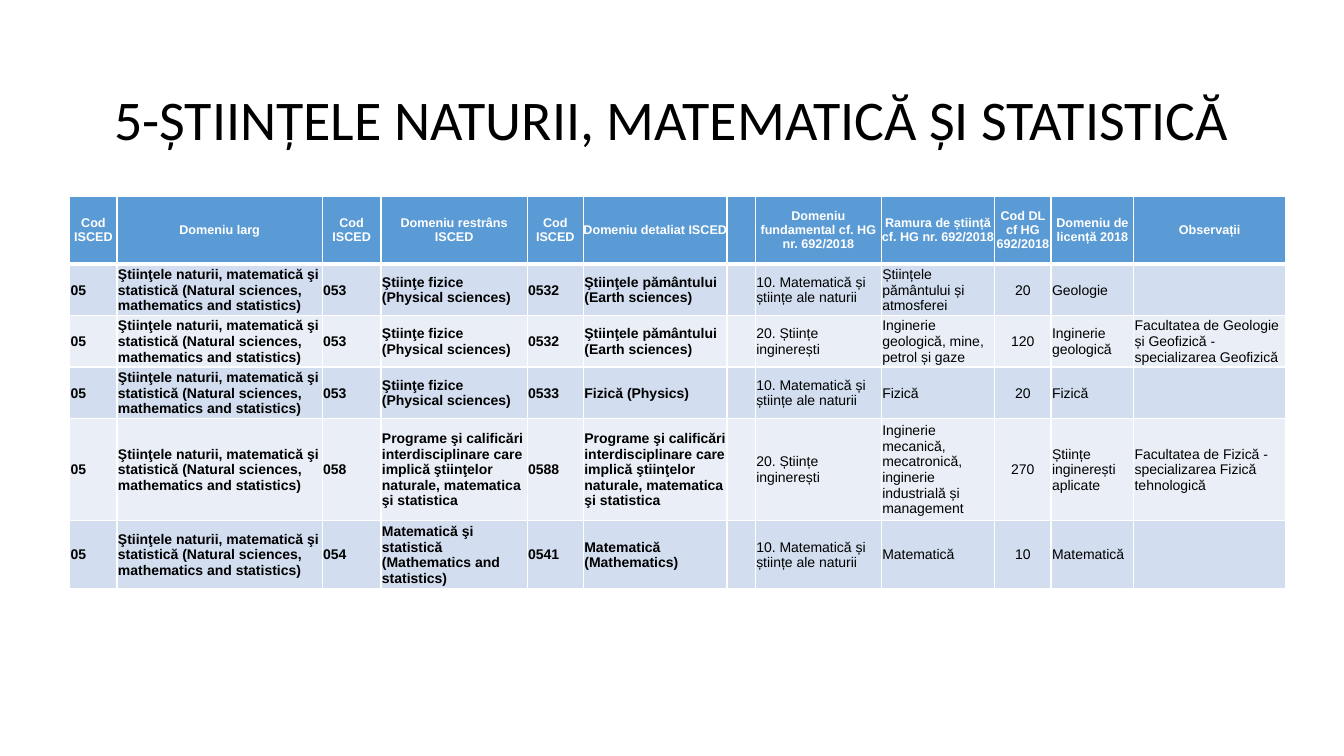
import pptx
import pptx.util
import pptx.dml.color
import pptx.enum.text
import pptx.oxml

ALIGN = pptx.enum.text.PP_ALIGN
MIDDLE = pptx.enum.text.MSO_ANCHOR.MIDDLE
NAMESPACE = "http://schemas.openxmlformats.org/drawingml/2006/main"

COLUMN_WIDTHS = [33.8, 146.6, 42, 104.4, 40.2, 102.6, 20.2, 90, 80.9, 40.4, 59, 108.6]
ROW_HEIGHTS = [48.2, 34.2, 34.2, 34.2, 67.8, 45]
CODE_COLUMNS = (0, 2, 4)
LICENCE_CODE_COLUMN = 9
BOLD_COLUMNS = 6

HEADINGS = [
    "Cod ISCED", "Domeniu larg", "Cod ISCED", "Domeniu restrâns ISCED", "Cod ISCED",
    "Domeniu detaliat ISCED", "", "Domeniu fundamental cf. HG nr. 692/2018",
    "Ramura de știință cf. HG nr. 692/2018", "Cod DL cf HG 692/2018",
    "Domeniu de licență 2018", "Observații",
]
BROAD_FIELD = ["05", "Ştiinţele naturii, matematică şi statistică "
               "(Natural sciences, mathematics and statistics)"]
PHYSICAL = ["053", "Ştiinţe fizice (Physical sciences)"]
EARTH = ["0532", "Ştiinţele pământului (Earth sciences)"]
INTERDISCIPLINARY = ("Programe şi calificări interdisciplinare care implică "
                     "ştiinţelor naturale, matematica şi statistica")
NATURE = "10. Matematică și științe ale naturii"
ENGINEERING = "20. Științe inginerești"
FIELDS = [
    PHYSICAL + EARTH + ["", NATURE, "Științele pământului și atmosferei", "20", "Geologie", ""],
    PHYSICAL + EARTH + ["", ENGINEERING, "Inginerie geologică, mine, petrol și gaze", "120",
                        "Inginerie geologică",
                        "Facultatea de Geologie și Geofizică - specializarea Geofizică"],
    PHYSICAL + ["0533", "Fizică (Physics)", "", NATURE, "Fizică", "20", "Fizică", ""],
    ["058", INTERDISCIPLINARY, "0588", INTERDISCIPLINARY, "", ENGINEERING,
     "Inginerie mecanică, mecatronică, inginerie industrială și management", "270",
     "Științe inginerești aplicate",
     "Facultatea de Fizică - specializarea Fizică tehnologică"],
    ["054", "Matematică şi statistică (Mathematics and statistics)", "0541",
     "Matematică (Mathematics)", "", NATURE, "Matematică", "10", "Matematică", ""],
]


def color(value):
    """Return the colour for a hex string."""
    return pptx.dml.color.RGBColor.from_string(value)


def set_values(target, values):
    """Set each attribute named in a dict."""
    for name, value in values.items():
        setattr(target, name, value)


def write(para, text, alignment, ink, font):
    """Write one formatted span into a paragraph."""
    para.alignment = alignment
    span = para.add_run()
    span.text = text
    set_values(span.font, font)
    span.font.color.rgb = color(ink)


def add_title(page, left, top, width, height):
    """Place the slide title in the given box."""
    box = page.shapes.add_textbox(*map(pptx.util.Pt, (left, top, width, height)))
    set_values(box.text_frame, {
        "word_wrap": True, "vertical_anchor": MIDDLE,
        "margin_top": 0, "margin_bottom": 0, "margin_right": pptx.util.Pt(15.8),
    })
    para = box.text_frame.paragraphs[0]
    para.line_spacing = 0.9
    write(para, "5-ȘTIINȚELE NATURII, MATEMATICĂ ȘI STATISTICĂ", ALIGN.CENTER, "000000",
          {"name": "Calibri", "size": pptx.util.Pt(40)})


def add_borders(cell, top, bottom):
    """Give a cell white borders, with top and bottom widths in points."""
    properties = cell._tc.get_or_add_tcPr()
    for side, width in {"L": 1, "R": 1, "T": top, "B": bottom}.items():
        properties.append(pptx.oxml.parse_xml(
            f'<a:ln{side} xmlns:a="{NAMESPACE}" w="{pptx.util.Pt(width)}">'
            f'<a:solidFill><a:srgbClr val="FFFFFF"/></a:solidFill></a:ln{side}>'))


def fill_cell(cell, row, column, text):
    """Format one cell by its place in the table."""
    header = row == 0
    inset = pptx.util.Pt(0 if header else 0.7)
    set_values(cell, {"vertical_anchor": MIDDLE, "margin_left": inset, "margin_right": inset,
                      "margin_top": inset, "margin_bottom": 0})
    add_borders(cell, 3 if row == 1 else 1, 3 if header else 1)
    cell.fill.solid()
    cell.fill.fore_color.rgb = color("5B9BD5" if header else ("EAEFF7", "D2DEEF")[row % 2])
    if not text:
        return
    alignment = ALIGN.LEFT
    if header or column == LICENCE_CODE_COLUMN:
        alignment = ALIGN.CENTER
    elif column in CODE_COLUMNS:
        alignment = ALIGN.JUSTIFY
    write(cell.text_frame.paragraphs[0], text, alignment, "FFFFFF" if header else "000000",
          {"name": "Arial", "size": pptx.util.Pt(9 if header else 10),
           "bold": header or column < BOLD_COLUMNS})


def add_fields_table(page, left, top):
    """Place the table of study fields with its corner at the given point."""
    rows = [HEADINGS] + [BROAD_FIELD + field for field in FIELDS]
    size = (left, top, sum(COLUMN_WIDTHS), sum(ROW_HEIGHTS))
    table = page.shapes.add_table(len(rows), len(HEADINGS), *map(pptx.util.Pt, size)).table
    table.horz_banding = False
    for column, width in zip(table.columns, COLUMN_WIDTHS):
        column.width = pptx.util.Pt(width)
    for row, height in zip(table.rows, ROW_HEIGHTS):
        row.height = pptx.util.Pt(height)
    for row, texts in enumerate(rows):
        for column, text in enumerate(texts):
            fill_cell(table.cell(row, column), row, column, text)


def main():
    """Build and save the deck."""
    deck = pptx.Presentation()
    set_values(deck, {"slide_width": pptx.util.Pt(960), "slide_height": pptx.util.Pt(540)})
    page = deck.slides.add_slide(deck.slide_layouts[6])
    add_title(page, 69.8, 61.2, 828, 51.8)
    add_fields_table(page, 49.8, 140.4)
    deck.save("out.pptx")


if __name__ == "__main__":
    main()
